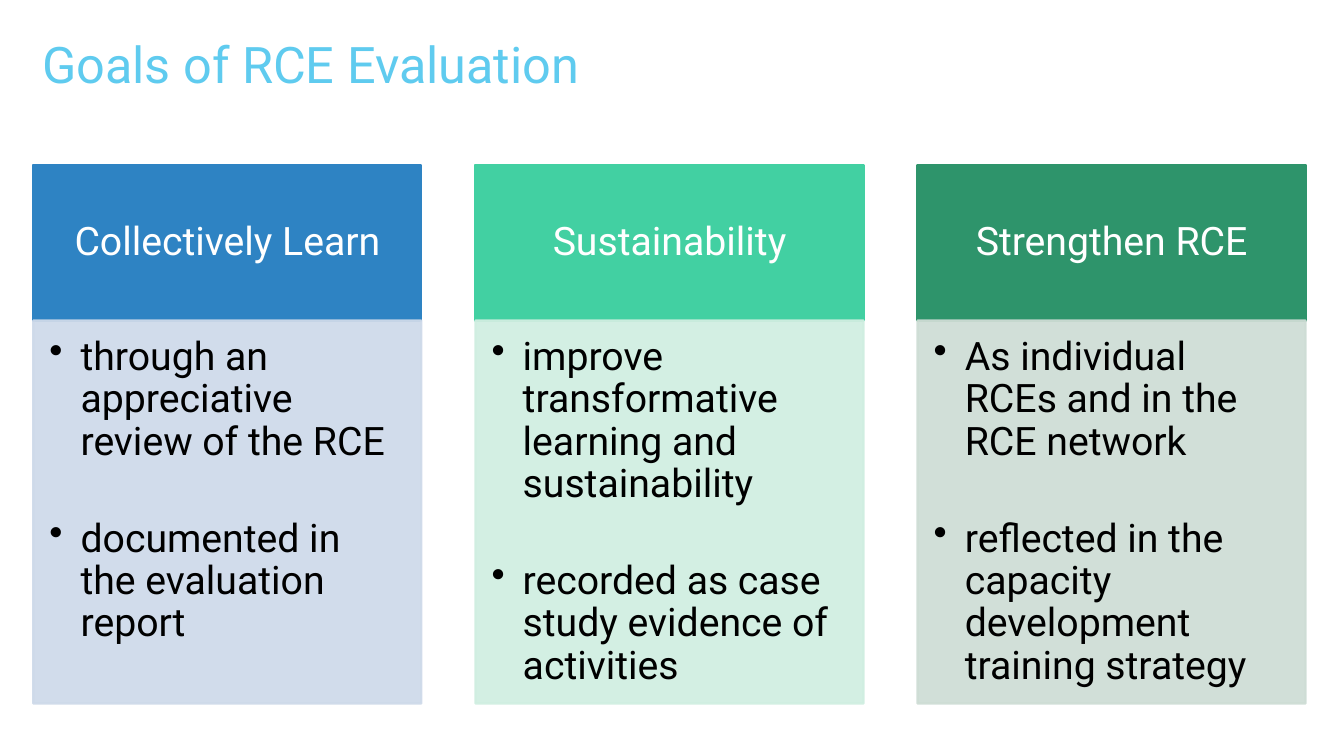
from lxml.etree import SubElement
from pptx import Presentation
from pptx.dml.color import RGBColor
from pptx.enum.shapes import MSO_SHAPE
from pptx.enum.text import MSO_ANCHOR as ANCHOR, PP_ALIGN as ALIGN
from pptx.oxml.ns import qn
from pptx.util import Inches, Pt

WHITE = RGBColor(0xFF, 0xFF, 0xFF)
BLACK = RGBColor(0x00, 0x00, 0x00)
SKY = RGBColor(0x5F, 0xCB, 0xEF)
BLUE = RGBColor(0x2E, 0x83, 0xC3)
PALE_BLUE = RGBColor(0xCD, 0xD9, 0xE9)
MINT = RGBColor(0x42, 0xD0, 0xA2)
PALE_MINT = RGBColor(0xCF, 0xEE, 0xE0)
GREEN = RGBColor(0x2E, 0x94, 0x6B)
PALE_GREEN = RGBColor(0xCD, 0xDC, 0xD4)

LEFT, TOP, WIDTH, GAP = 0.33, 1.64, 3.85, 0.535
HEAD_H, BODY_H = 1.54, 3.8
HEAD = {"vertical_anchor": ANCHOR.MIDDLE, "margin_left": Inches(0.22), "margin_right": Inches(0.22),
        "margin_top": Inches(0.12), "margin_bottom": Inches(0.12)}
BODY = {"vertical_anchor": ANCHOR.TOP, "margin_left": Inches(0.16), "margin_right": Inches(0.22),
        "margin_top": Inches(0.16), "margin_bottom": Inches(0.24)}
HEAD_P = {"alignment": ALIGN.CENTER, "line_spacing": 0.9}
BODY_P = {"alignment": ALIGN.LEFT, "line_spacing": 0.9}

GOALS = [
    ("Collectively Learn", BLUE, PALE_BLUE,
     ["through an appreciative review of the RCE", "documented in the evaluation report"]),
    ("Sustainability", MINT, PALE_MINT,
     ["improve transformative learning and sustainability",
      "recorded as case study evidence of activities"]),
    ("Strengthen RCE", GREEN, PALE_GREEN,
     ["As individual RCEs and in the RCE network",
      "reflected in the capacity development training strategy"]),
]


def write(p, text, size, color):
    r = p.add_run()
    r.text = text
    for name, value in {"name": "Roboto", "size": Pt(size)}.items():
        setattr(r.font, name, value)
    r.font.color.rgb = color


def add_panel(x, y, h, color, frame):
    sp = s.shapes.add_shape(MSO_SHAPE.RECTANGLE, Inches(x), Inches(y), Inches(WIDTH), Inches(h))
    sp.shadow.inherit = False
    sp.fill.solid()
    sp.fill.fore_color.rgb = color
    sp.line.color.rgb = color
    sp.line.width = Pt(1.5)
    sp.text_frame.word_wrap = True
    for name, value in frame.items():
        setattr(sp.text_frame, name, value)
    return sp


prs = Presentation()
prs.slide_width, prs.slide_height = Inches(13.33), Inches(7.5)
s = prs.slides.add_slide(prs.slide_layouts[6])

title = s.shapes.add_textbox(Inches(0.32), Inches(0.28), Inches(9.4), Inches(1.44))
title.text_frame.word_wrap = True
write(title.text_frame.paragraphs[0], "Goals of RCE Evaluation", 36, SKY)

for col, (heading, strong, pale, points) in enumerate(GOALS):
    x = LEFT + col * (WIDTH + GAP)
    head = add_panel(x, TOP, HEAD_H, strong, HEAD)
    p = head.text_frame.paragraphs[0]
    for name, value in HEAD_P.items():
        setattr(p, name, value)
    write(p, heading, 28, WHITE)

    body = add_panel(x, TOP + HEAD_H, BODY_H, pale, BODY)
    for clr in body.element.spPr.iter(qn("a:srgbClr")):
        SubElement(clr, qn("a:alpha"), val="90000")
    tf = body.text_frame
    for i, point in enumerate(points):
        p = tf.add_paragraph() if i else tf.paragraphs[0]
        for name, value in BODY_P.items():
            setattr(p, name, value)
        p.space_before = Pt(39 * i)
        pPr = p._p.get_or_add_pPr()
        pPr.set("marL", str(Inches(0.31)))
        pPr.set("indent", str(-Inches(0.31)))
        SubElement(pPr, qn("a:buChar"), char="•")
        write(p, point, 28, BLACK)

prs.save("out.pptx")
